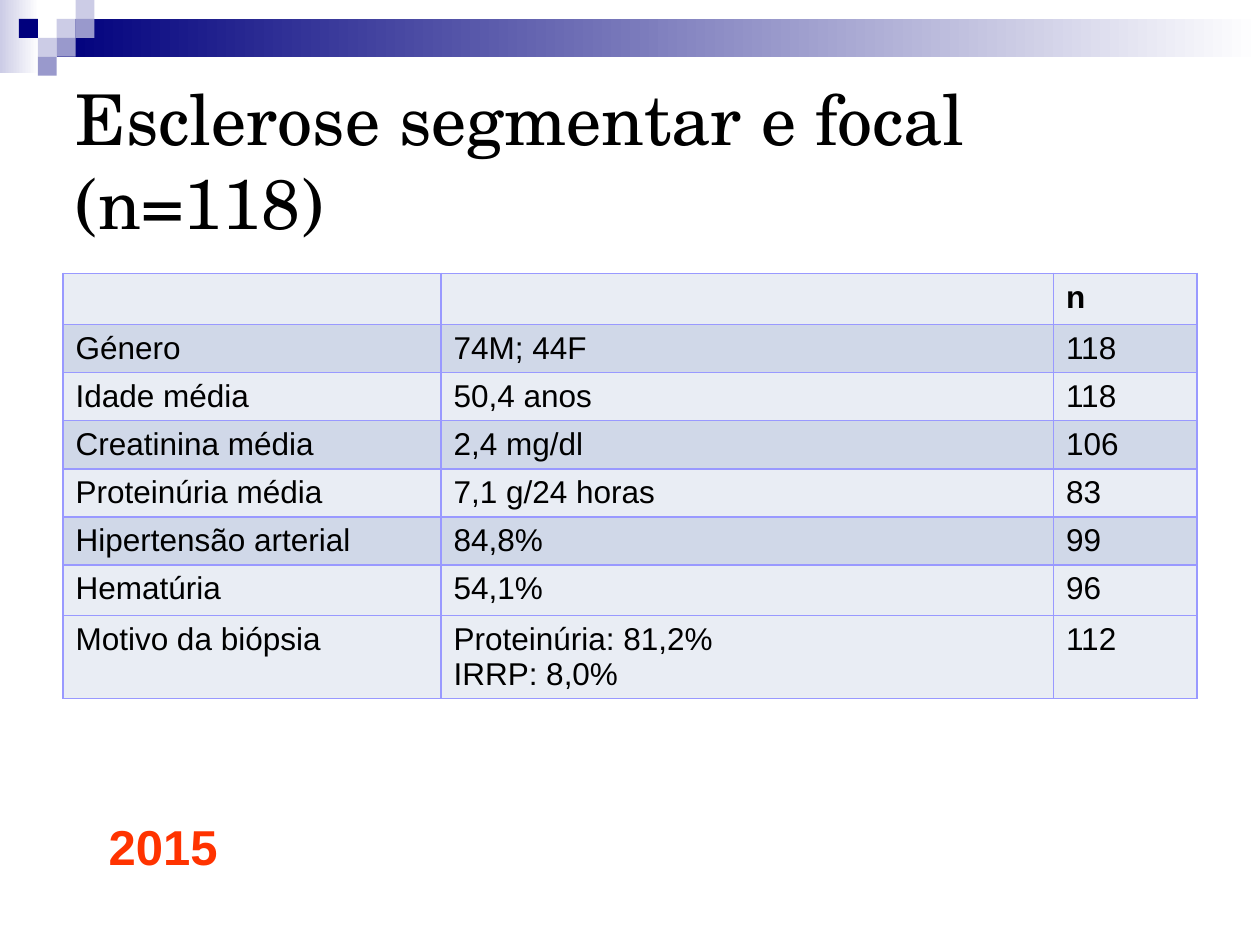
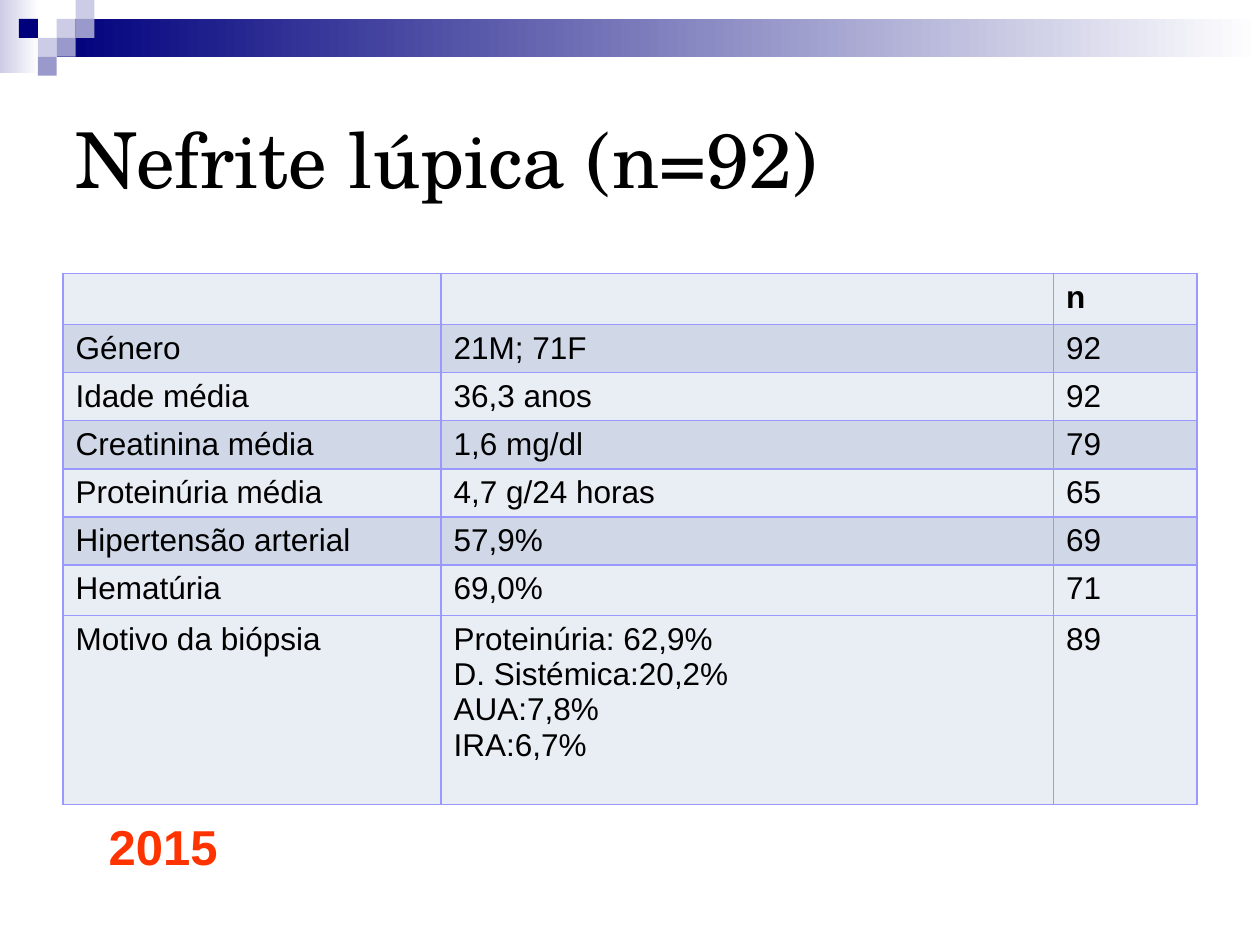
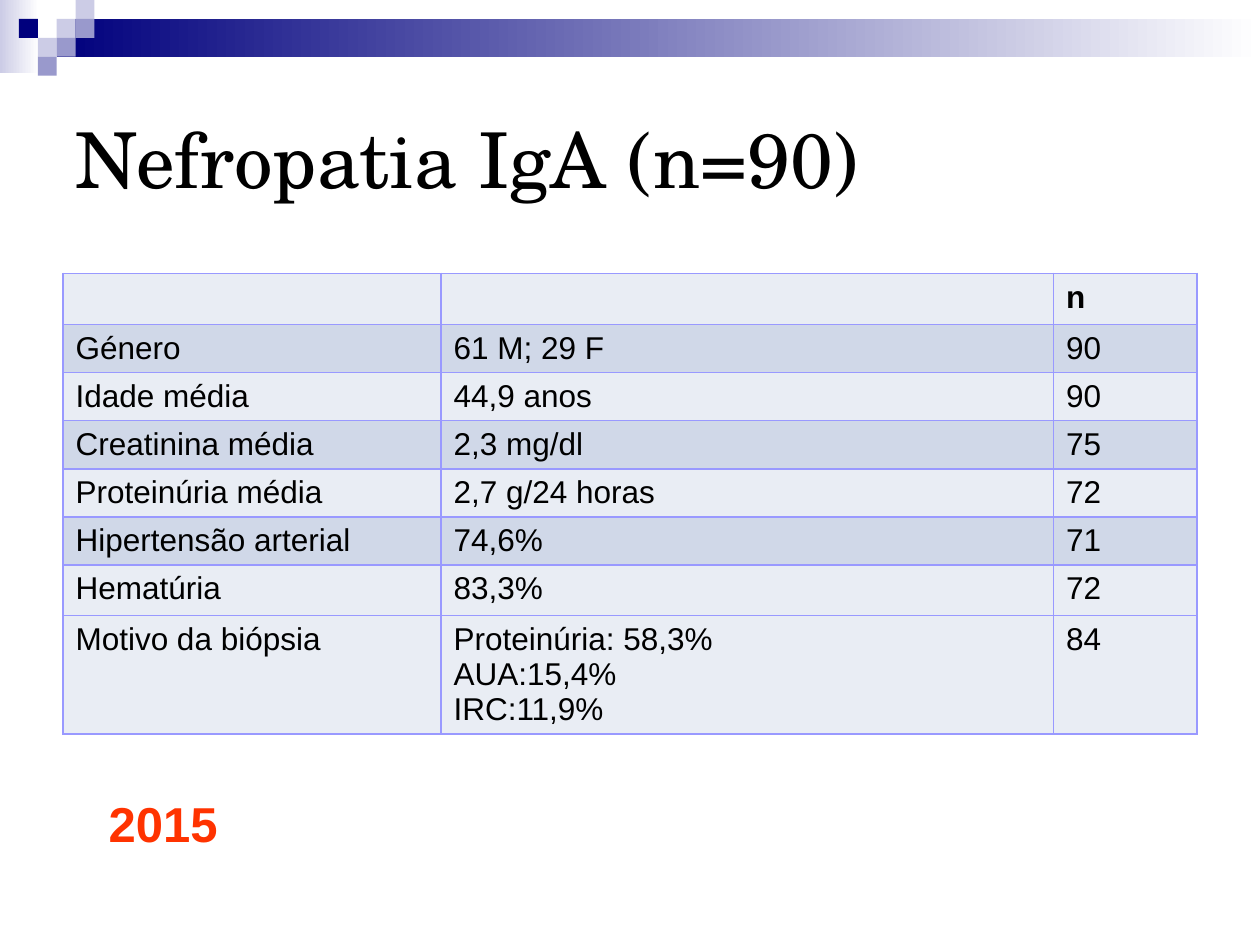
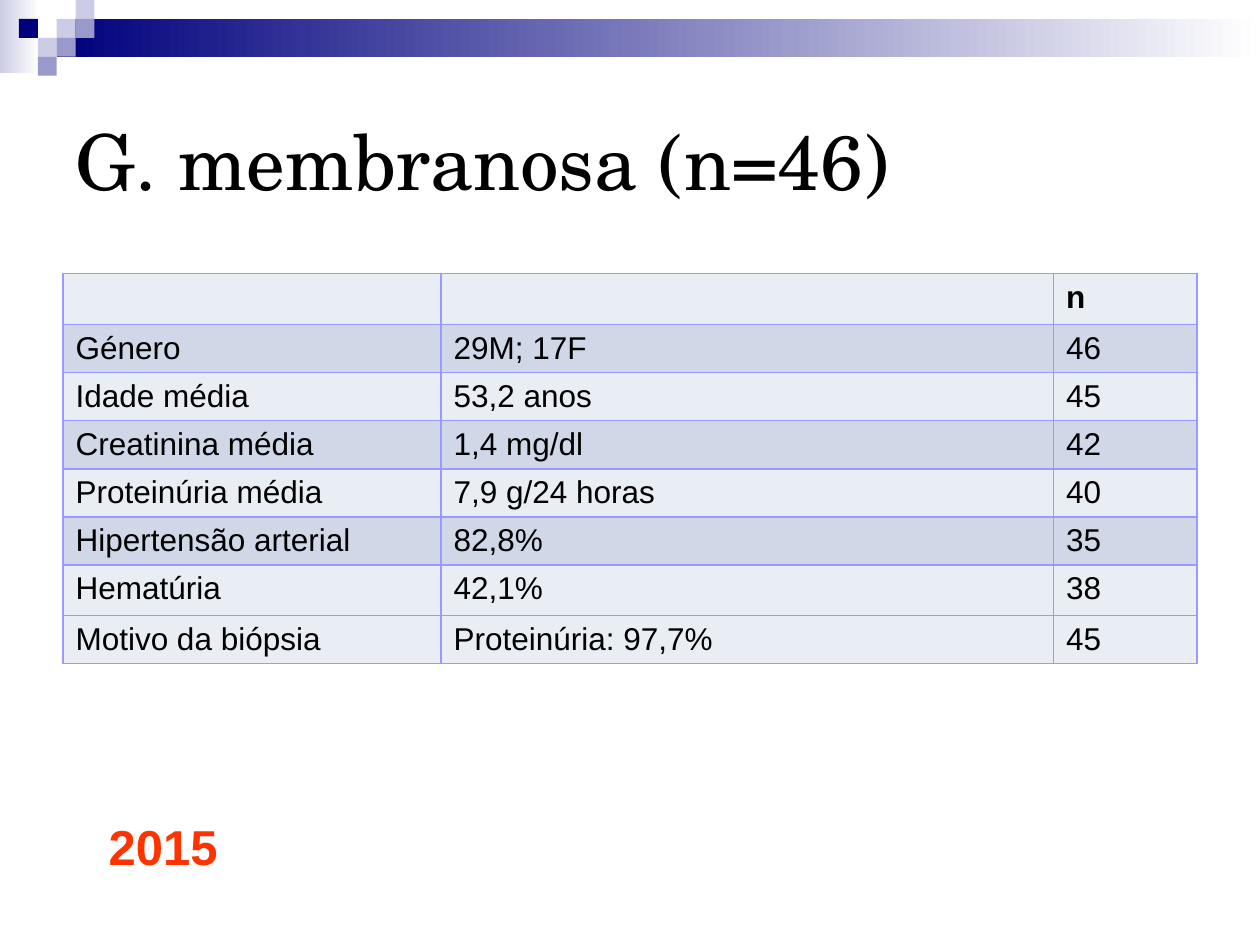
from lxml.etree import SubElement as Sub
from pptx import Presentation
from pptx.dml.color import RGBColor
from pptx.enum.shapes import MSO_SHAPE as Shape
from pptx.enum.text import MSO_ANCHOR as Anchor, MSO_AUTO_SIZE as Fit, PP_ALIGN as Align
from pptx.oxml.ns import qn
from pptx.util import Pt

NAVY = RGBColor(0x00, 0x00, 0x7D)
LILAC = RGBColor(0x99, 0x99, 0xCC)
PALE = RGBColor(0xCC, 0xCC, 0xE6)
WHITE = RGBColor(0xFF, 0xFF, 0xFF)
BLACK = RGBColor(0x00, 0x00, 0x00)
RED = RGBColor(0xFF, 0x33, 0x00)
EDGE = RGBColor(0x99, 0x99, 0xFF)
LIGHT = RGBColor(0xE9, 0xED, 0xF4)
DARK = RGBColor(0xD0, 0xD8, 0xE8)
SERIF = "TeX Gyre Schola"
SANS = "Arial"
UNIT = 10.8

SQUARES = [(3, 1, PALE), (4, 0, PALE), (4, 1, LILAC), (2, 2, PALE),
           (1, 1, NAVY), (3, 2, LILAC), (2, 3, LILAC)]
BLOCKS = [(0, 0, 22.3, 41.8, PALE, WHITE),
          (3 * UNIT, UNIT, 720 - 3 * UNIT, 2 * UNIT, NAVY, WHITE)]
BLOCKS += [(col * UNIT, row * UNIT, UNIT, UNIT, tone, None) for col, row, tone in SQUARES]

LABELS = ["", "Género", "Idade média", "Creatinina média", "Proteinúria média",
          "Hipertensão arterial", "Hematúria", "Motivo da biópsia"]
WIDTHS = [216, 350, 82]
HEIGHTS = [27.5] * 6 + [28.8]

SLIDES = [
    ("Esclerose segmentar e focal (n=118)", 40, 37.4, 47.5, 463,
     ["", "74M; 44F", "50,4 anos", "2,4 mg/dl", "7,1 g/24 horas", "84,8%", "54,1%",
      "Proteinúria: 81,2%\nIRRP: 8,0%"],
     ["n", "118", "118", "106", "83", "99", "96", "112"]),
    ("Nefrite lúpica (n=92)", 44, 36, 108, 463,
     ["", "21M; 71F", "36,3 anos", "1,6 mg/dl", "4,7 g/24 horas", "57,9%", "69,0%",
      "Proteinúria: 62,9%\nD. Sistémica:20,2%\nAUA:7,8%\nIRA:6,7%"],
     ["n", "92", "92", "79", "65", "69", "71", "89"]),
    ("Nefropatia IgA (n=90)", 44, 36, 67.5, 450,
     ["", "61 M; 29 F", "44,9 anos", "2,3 mg/dl", "2,7 g/24 horas", "74,6%", "83,3%",
      "Proteinúria: 58,3%\nAUA:15,4%\nIRC:11,9%"],
     ["n", "90", "90", "75", "72", "71", "72", "84"]),
    ("G. membranosa (n=46)", 44, 37.4, 27.5, 463,
     ["", "29M; 17F", "53,2 anos", "1,4 mg/dl", "7,9 g/24 horas", "82,8%", "42,1%",
      "Proteinúria: 97,7%"],
     ["n", "46", "45", "42", "40", "35", "38", "45"]),
]


def style(frame, name, size, tone, bold=False, align=Align.LEFT):
    for para in frame.paragraphs:
        para.alignment = align
        for run in para.runs:
            font = run.font
            font.name, font.size, font.bold = name, Pt(size), bold
            font.color.rgb = tone


def border(cell):
    props = cell._tc.get_or_add_tcPr()
    for side in ("a:lnL", "a:lnR", "a:lnT", "a:lnB"):
        line = Sub(props, qn(side), w=str(Pt(1)))
        Sub(Sub(line, qn("a:solidFill")), qn("a:srgbClr"), val=str(EDGE))


deck = Presentation()
deck.slide_width, deck.slide_height = Pt(720), Pt(540)
layout = deck.slide_layouts[5]
pages = [deck.slides.add_slide(layout) for _ in SLIDES]

for spot, (left, top, width, height, tone, fade) in enumerate(BLOCKS):
    block = pages[0].shapes.add_shape(Shape.RECTANGLE, Pt(left), Pt(top), Pt(width), Pt(height))
    block.shadow.inherit = False
    block.line.fill.background()
    if fade is None:
        block.fill.solid()
        block.fill.fore_color.rgb = tone
    else:
        block.fill.gradient()
        block.fill.gradient_angle = 0
        for stop, shade in zip(block.fill.gradient_stops, (tone, fade)):
            stop.color.rgb = shade
    block.element.nvSpPr.cNvPr.set("id", str(20 + spot))
    layout.shapes.element.insert(2 + spot, block.element)

for page, (name, size, top, last, low, facts, counts) in zip(pages, SLIDES):
    title = page.shapes.title
    title.left, title.top, title.width, title.height = Pt(36), Pt(top), Pt(648), Pt(108)
    frame = title.text_frame
    frame.text = name
    frame.auto_size = Fit.NONE
    frame.vertical_anchor = Anchor.MIDDLE
    style(frame, SERIF, size, BLACK)

    tall = HEIGHTS + [last]
    grid = page.shapes.add_table(len(LABELS), len(WIDTHS), Pt(36), Pt(156.2),
                                 Pt(sum(WIDTHS)), Pt(sum(tall))).table
    grid.first_row = grid.horz_banding = False
    for col, width in zip(grid.columns, WIDTHS):
        col.width = Pt(width)
    for pos, texts in enumerate(zip(LABELS, facts, counts)):
        grid.rows[pos].height = Pt(tall[pos])
        for col, text in enumerate(texts):
            cell = grid.cell(pos, col)
            border(cell)
            cell.fill.solid()
            cell.fill.fore_color.rgb = DARK if pos in (1, 3, 5) else LIGHT
            if text:
                cell.text_frame.text = text
                style(cell.text_frame, SANS, 18, BLACK, bold=pos == 0)

    year = page.shapes.add_textbox(Pt(25.2), Pt(low), Pt(136), Pt(41)).text_frame
    year.word_wrap = True
    year.auto_size = Fit.SHAPE_TO_FIT_TEXT
    year.text = "2015"
    style(year, SANS, 28, RED, True, Align.CENTER)

deck.save("out.pptx")
